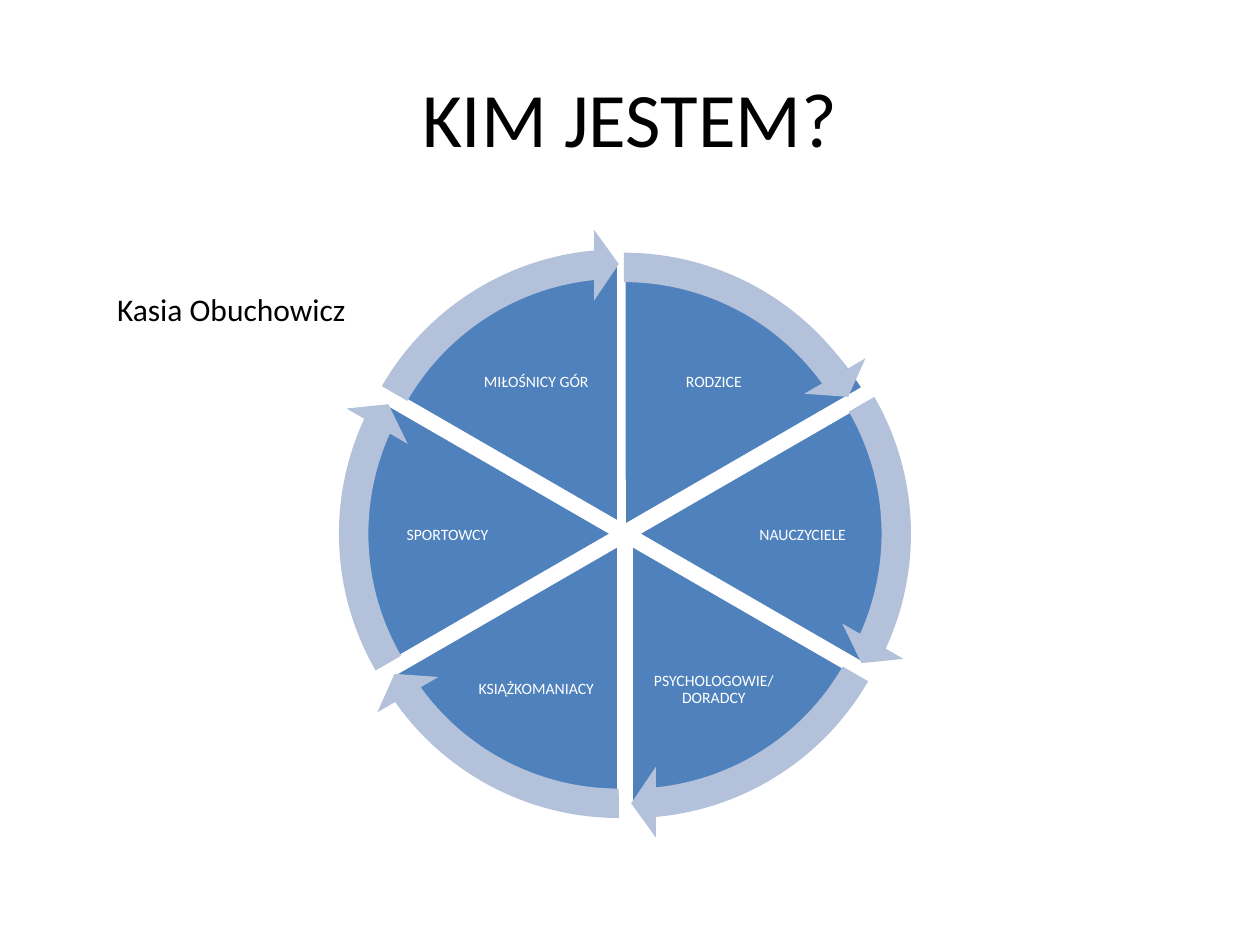
import math

from pptx import Presentation
from pptx import util as u
from pptx.dml.color import RGBColor
from pptx.enum import shapes, text

COLORS = {"wedge": "4F81BD", "arrow": "B3C1DB", "white": "FFFFFF", "black": "000000"}
ROLES = ["RODZICE", "NAUCZYCIELE", "PSYCHOLOGOWIE/ DORADCY",
         "KSIĄŻKOMANIACY", "SPORTOWCY", "MIŁOŚNICY GÓR"]
STEP = 360 / len(ROLES)
ANGLE_UNIT = 0.6
TIGHT = {f"margin_{side}": u.Cm(0.03) for side in ("left", "right", "top", "bottom")}


def color(name):
    """Return the named colour."""
    return RGBColor.from_string(COLORS[name])


def apply(target, formats):
    """Set each attribute of the target from a dict."""
    for name, value in formats.items():
        setattr(target, name, value)


def add_text(slide, box, words, size, color_name, frame_formats, paragraph_formats):
    """Add a text box with one paragraph in the given box."""
    frame = slide.shapes.add_textbox(*map(u.Cm, box)).text_frame
    apply(frame, {"word_wrap": True, **frame_formats})
    paragraph = frame.paragraphs[0]
    apply(paragraph, paragraph_formats)
    run = paragraph.add_run()
    run.text = words
    apply(run.font, {"name": "Calibri", "size": u.Pt(size)})
    run.font.color.rgb = color(color_name)


def centred_box(x, y, width, height):
    """Return the box of a given size around a centre."""
    return x - width / 2, y - height / 2, width, height


def add_sector(slide, kind, box, adjustments, fill):
    """Add a flat preset shape with its adjustments and return it."""
    shape = slide.shapes.add_shape(kind, *map(u.Cm, box))
    shape.shadow.inherit = False
    for index, value in enumerate(adjustments):
        shape.adjustments[index] = value
    shape.fill.solid()
    shape.fill.fore_color.rgb = color(fill)
    shape.line.fill.background()
    return shape


def add_heading(slide, box):
    """Add the centred slide title."""
    add_text(slide, box, "KIM JESTEM?", 44, "black",
             {"vertical_anchor": text.MSO_ANCHOR.MIDDLE},
             {"alignment": text.PP_ALIGN.CENTER})


def add_author(slide, box):
    """Add the author's name on a single line."""
    add_text(slide, box, "Kasia Obuchowicz", 18, "black",
             {"word_wrap": False, "auto_size": text.MSO_AUTO_SIZE.SHAPE_TO_FIT_TEXT}, {})


def add_wheel(slide, box):
    """Add the wheel of labelled wedges inside a ring of arrows."""
    left, top, width, height = box
    center_x, center_y = left + width / 2, top + height / 2
    pie_size = 0.89 * width
    starts = [(270 + STEP * index) % 360 for index in range(len(ROLES))]
    middles = [math.radians(start + STEP / 2) for start in starts]
    hubs = [(center_x + 0.25 * math.cos(middle), center_y + 0.25 * math.sin(middle))
            for middle in middles]
    hubs[0] = center_x - 0.02, center_y - 0.15
    pie_sizes = [(11.25, 10.87)] + [(pie_size, pie_size)] * (len(ROLES) - 1)

    for role, start, middle, hub, size in zip(ROLES, starts, middles, hubs, pie_sizes):
        angles = [start * ANGLE_UNIT, (start + STEP) % 360 * ANGLE_UNIT]
        wedge = add_sector(slide, shapes.MSO_SHAPE.PIE, centred_box(*hub, *size),
                           angles, "wedge")
        wedge.line.color.rgb = color("white")
        wedge.line.width = u.Pt(2)
        label_x = center_x + 3.58 * math.cos(middle)
        label_y = center_y + 3.58 * math.sin(middle) + 0.04
        add_text(slide, centred_box(label_x, label_y, 2.8, 2.1), role, 9, "white",
                 {"vertical_anchor": text.MSO_ANCHOR.MIDDLE, **TIGHT},
                 {"alignment": text.PP_ALIGN.CENTER, "line_spacing": 0.9})

    for start, hub in zip(starts, hubs):
        tip = (start + 54.54) % 360 * ANGLE_UNIT
        add_sector(slide, shapes.MSO_SHAPE.CIRCULAR_ARROW,
                   centred_box(*hub, width, height),
                   [0.05, 3.28, tip, start * ANGLE_UNIT, 0.06], "arrow")


def main():
    """Build and save the presentation."""
    presentation = Presentation()
    apply(presentation, {"slide_width": u.Cm(25.4), "slide_height": u.Cm(19.05)})
    slide = presentation.slides.add_slide(presentation.slide_layouts[6])
    add_heading(slide, (1.27, 0.76, 22.86, 3.18))
    add_wheel(slide, (6.67, 4.83, 11.86, 11.86))
    add_author(slide, (2.11, 5.72, 5.18, 1.02))
    presentation.save("out.pptx")


if __name__ == "__main__":
    main()
